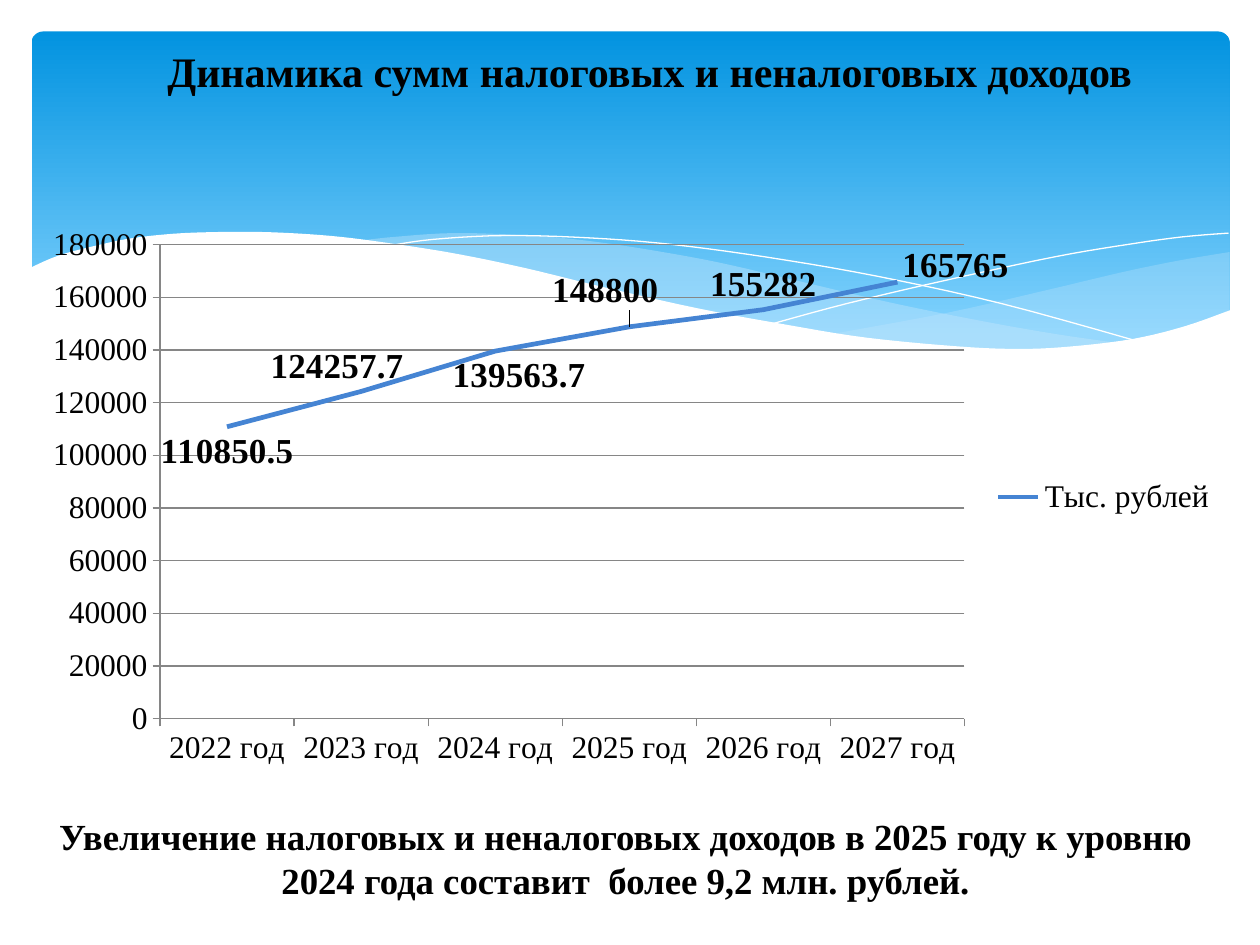
from lxml.etree import SubElement
from pptx import Presentation
from pptx.chart.data import CategoryChartData
from pptx.dml.color import RGBColor
from pptx.enum.chart import XL_CHART_TYPE as ChartType
from pptx.enum.chart import XL_LABEL_POSITION as Side
from pptx.enum.chart import XL_LEGEND_POSITION as LegendSide
from pptx.enum.chart import XL_TICK_MARK as Tick
from pptx.enum.shapes import MSO_SHAPE as Preset
from pptx.enum.text import MSO_AUTO_SIZE as AutoSize
from pptx.enum.text import PP_ALIGN as Align
from pptx.oxml.ns import qn
from pptx.util import Pt

BLACK = RGBColor(0x00, 0x00, 0x00)
WHITE = RGBColor(0xFF, 0xFF, 0xFF)
SKY = RGBColor(0x02, 0x93, 0xE0)
PALE_SKY = RGBColor(0x83, 0xD3, 0xFE)
MIST = RGBColor(0xC6, 0xE7, 0xFC)
BLUE = RGBColor(0x45, 0x84, 0xD3)
GRAY = RGBColor(0x86, 0x86, 0x86)

RIGHT_WAVE = [
    [(702.7, 144), (673, 149), (641.5, 155.5), (599, 165.6), (542, 178.6), (476, 190.8)],
    [(476, 190.8), (517.7, 195.8), (553.7, 199.4), (586, 200.2), (621.4, 198),
     (651.6, 193.7), (678.2, 186.5), (702.7, 177.8)],
]
MIDDLE_WAVE = [
    [(643, 196.6), (602.6, 190.8), (558, 182.9), (508.3, 172.8), (452.9, 159.8),
     (409.7, 149.8), (370, 142.6), (334.8, 137.5), (302.4, 134.6), (260, 133.2),
     (225.4, 135.4), (206, 137.5)],
    [(206, 137.5), (246.2, 143.3), (290.9, 151.9), (323.3, 159.8), (381.6, 172.8),
     (432.7, 183.6), (478.8, 191.5), (519.8, 197.3), (556.6, 199.4), (589, 200.2),
     (617, 199.4), (643, 196.6)],
]
FALLING_LINE = [[(222.5, 140.4), (247.7, 136.8), (288.7, 134.6), (337.7, 136),
                 (383.8, 139.7), (437.8, 146.9), (500.4, 157.7), (572.4, 173.5),
                 (653, 195.8)]]
RISING_LINE = [[(441.4, 185), (483.8, 173.5), (538.6, 160.6), (602, 146.9),
                (644.4, 139.7), (675.4, 135.4), (702, 133.2)]]
WHITE_WAVE = [
    [(703.4, 177.1), (676.8, 186.5), (647.3, 193.7), (612, 198), (582.5, 199.4),
     (548, 198), (495.4, 193), (450.7, 185.8), (399.6, 176.4), (342, 163.4),
     (301, 153.4), (262.8, 145.4), (227.5, 139.7), (195, 135.4), (165.6, 133.2),
     (139, 132.5), (105, 133.2), (76.3, 136), (54.7, 140.4), (33, 146.2), (16.6, 153.4)],
    [(16.6, 236.9), (703.4, 236.9)],
]
INCOME = {
    "2022 год": (110850.5, Side.BELOW, 0, 0),
    "2023 год": (124257.7, Side.ABOVE, -0.02, 0),
    "2024 год": (139563.7, Side.BELOW, 0.02, 0),
    "2025 год": (148800, Side.ABOVE, -0.02, -0.02),
    "2026 год": (155282, Side.ABOVE, 0, 0),
    "2027 год": (165765, Side.RIGHT, 0, -0.03),
}


def smooth(knots, steps=5):
    """Return points of a Catmull-Rom curve through the knots."""
    padded = [knots[0], *knots, knots[-1]]
    points = [knots[0]]
    for a, b, c, d in zip(padded, padded[1:], padded[2:], padded[3:]):
        for step in range(1, steps + 1):
            t = step / steps
            points.append(tuple(
                (2 * q + (r - p) * t + (2 * p - 5 * q + 4 * r - s) * t**2
                 + (3 * q - p - 3 * r + s) * t**3) / 2
                for p, q, r, s in zip(a, b, c, d)))
    return points


def manual_layout(**values):
    """Return a function that fills a parent with a manual chart layout."""
    def fill(parent, index):
        layout = SubElement(parent, qn("c:layout"))
        manual = SubElement(layout, qn("c:manualLayout"))
        for name, value in values.items():
            SubElement(manual, qn(f"c:{name}")).set("val", str(value))
        parent.insert(index, layout)
    return fill


class SlideBuilder:
    """Holds the style and the current slide."""

    def __init__(self, page, face="Times New Roman"):
        self.page = page
        self.face = face

    def style(self, font, size, bold=False):
        font.name, font.size, font.bold = self.face, Pt(size), bold
        font.color.rgb = BLACK

    def banner(self, left, top, width, height):
        shape = self.page.shapes.add_shape(
            Preset.ROUNDED_RECTANGLE, Pt(left), Pt(top), Pt(width), Pt(height))
        shape.adjustments[0] = 0.034
        shape.shadow.inherit = False
        shape.line.fill.background()
        shape.fill.gradient()
        shape.fill.gradient_angle = 270
        for stop, color, position in zip(shape.fill.gradient_stops, (SKY, PALE_SKY), (0, 0.9)):
            stop.color.rgb, stop.position = color, position

    def wave(self, edges, fill=None, alpha=100):
        points = [(Pt(x), Pt(y)) for edge in edges for x, y in smooth(edge)]
        builder = self.page.shapes.build_freeform(*points[0])
        builder.add_line_segments(points[1:], close=fill is not None)
        shape = builder.convert_to_shape()
        shape.shadow.inherit = False
        if fill is None:
            shape.fill.background()
            shape.line.color.rgb, shape.line.width = WHITE, Pt(0)
            return
        shape.line.fill.background()
        shape.fill.solid()
        shape.fill.fore_color.rgb = fill
        if alpha < 100:
            color = shape.fill._xPr.find(f".//{qn('a:srgbClr')}")
            SubElement(color, qn("a:alpha")).set("val", str(alpha * 1000))

    def text(self, left, top, width, height, words, size):
        box = self.page.shapes.add_textbox(Pt(left), Pt(top), Pt(width), Pt(height))
        box.text_frame.word_wrap = True
        box.text_frame.auto_size = AutoSize.SHAPE_TO_FIT_TEXT
        para = box.text_frame.paragraphs[0]
        para.text, para.alignment = words, Align.CENTER
        self.style(para.font, size, True)

    def line_chart(self, left, top, width, height, name, rows):
        data = CategoryChartData()
        data.categories = list(rows)
        data.add_series(name, [row[0] for row in rows.values()])
        chart = self.page.shapes.add_chart(
            ChartType.LINE, Pt(left), Pt(top), Pt(width), Pt(height), data).chart
        self.style(chart.font, 18)
        chart.has_title = False
        chart.has_legend = True
        chart.legend.position = LegendSide.RIGHT
        chart.legend.include_in_layout = False
        self.style(chart.legend.font, 18)
        legend = chart.legend._element
        manual_layout(xMode="edge", yMode="edge", x=0.8, y=0.77, w=0.19, h=0.09)(legend, 1)

        for axis in (chart.category_axis, chart.value_axis):
            axis.major_tick_mark = Tick.OUTSIDE
            axis.format.line.color.rgb = GRAY
            self.style(axis.tick_labels.font, 18)
        scale = chart.value_axis
        scale.minimum_scale, scale.maximum_scale, scale.major_unit = 0, 180000, 20000
        scale.major_gridlines.format.line.color.rgb = GRAY

        plot_area = chart._chartSpace.chart.plotArea
        for old in plot_area.findall(qn("c:layout")):
            plot_area.remove(old)
        manual_layout(layoutTarget="inner", xMode="edge", yMode="edge",
                      x=0.109, y=0.05, w=0.67, h=0.846)(plot_area, 0)

        chart.plots[0].vary_by_categories = False
        series = chart.plots[0].series[0]
        series.smooth = False
        series.format.line.color.rgb, series.format.line.width = BLUE, Pt(2.7)
        for index, (_, side, _, _) in enumerate(rows.values()):
            label = series.points[index].data_label
            self.style(label.font, 20, True)
            label.position = side
        labels = series._element.iter(qn("c:dLbl"))
        for label, (_, _, dx, dy) in zip(list(labels), rows.values()):
            manual_layout(x=dx, y=dy)(label, 1)


def main():
    """Build and save the slide."""
    deck = Presentation()
    deck.slide_width, deck.slide_height = Pt(720), Pt(540)
    slide = SlideBuilder(deck.slides.add_slide(deck.slide_layouts[6]))
    slide.banner(18, 18, 684.7, 194.4)
    slide.wave(RIGHT_WAVE, MIST, 29)
    slide.wave(MIDDLE_WAVE, MIST, 40)
    slide.wave(FALLING_LINE)
    slide.wave(RISING_LINE)
    slide.wave(WHITE_WAVE, WHITE)
    slide.line_chart(16.6, 123.8, 686.2, 320.4, "Тыс. рублей", INCOME)
    slide.text(56.2, 22.3, 630, 36, "Динамика сумм налоговых и неналоговых доходов", 24)
    slide.text(11.5, 461.5, 692, 58.3,
               "Увеличение налоговых и неналоговых доходов в 2025 году к уровню "
               "2024 года составит  более 9,2 млн. рублей.", 21)
    deck.save("out.pptx")


if __name__ == "__main__":
    main()
